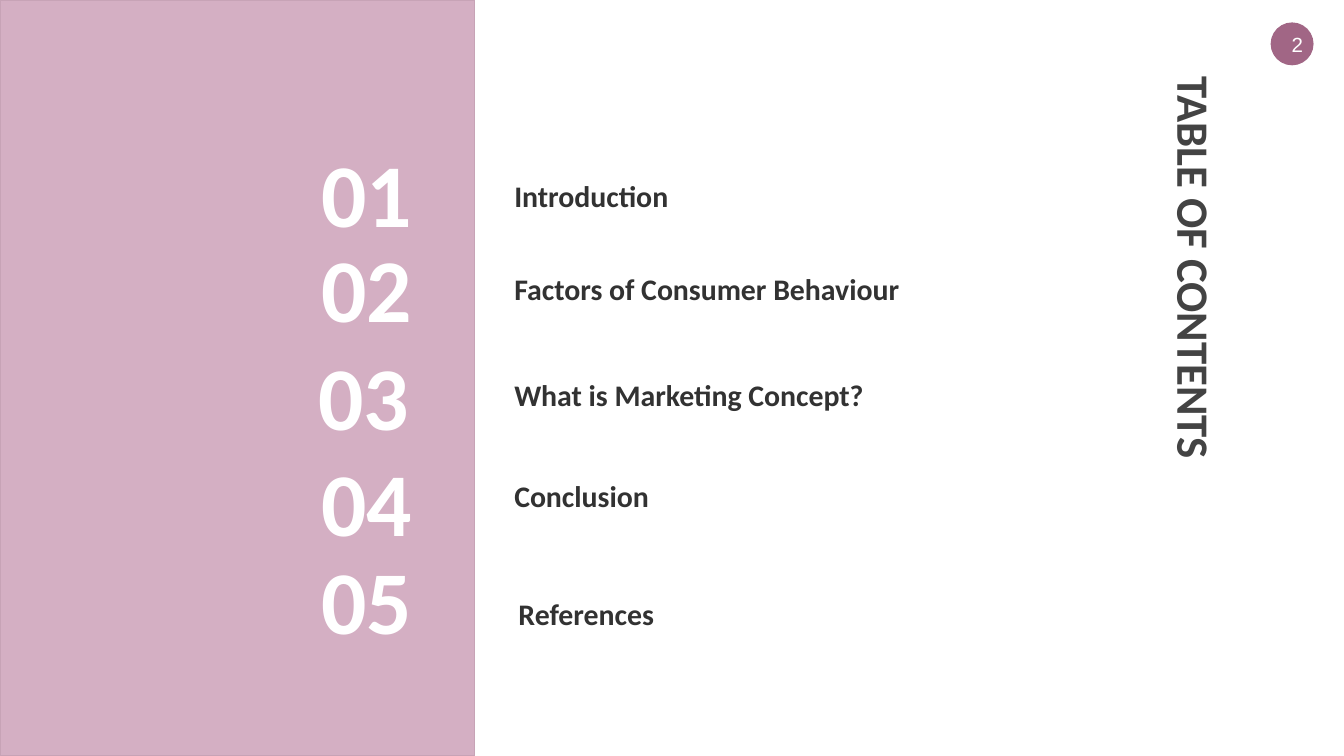
from dataclasses import dataclass

from pptx import Presentation
from pptx import util as u
from pptx.dml.color import RGBColor
from pptx.enum import shapes, text


@dataclass(frozen=True)
class Theme:
    panel: str = "D4AFC3"
    panel_line: str = "C7A3B6"
    badge: str = "A16685"
    title: str = "434343"
    topic: str = "323232"
    white: str = "FFFFFF"
    font: str = "Calibri"
    badge_font: str = "Arial"
    title_size: int = 24
    number_size: int = 48
    topic_size: int = 16
    badge_size: int = 11


THEME = Theme()
SLIDE_WIDTH, SLIDE_HEIGHT = 25.4, 14.29
INSET = 0.25
NUMBER_HEIGHT, TOPIC_HEIGHT = 0.99, 1.6

# Each entry: number (left, top, width), topic (left, top, width), in cm
CONTENTS = [
    ("Introduction", (5.82, 3.12, 4.62), (9.47, 2.69, 6.25)),
    ("Factors of Consumer Behaviour", (5.82, 4.93, 4.29), (9.47, 4.45, 10.13)),
    ("What is Marketing Concept?", (5.77, 6.96, 4.17), (9.47, 6.45, 10.31)),
    ("Conclusion", (5.82, 8.97, 4.17), (9.47, 8.36, 10.31)),
    ("References", (5.82, 10.82, 4.17), (9.55, 10.59, 6.25)),
]


def format_text(frame, words, size, color, font=THEME.font, bold=True):
    frame.text = words
    span = frame.paragraphs[0].runs[0]
    span.font.name = font
    span.font.size = u.Pt(size)
    span.font.bold = bold
    span.font.color.rgb = RGBColor.from_string(color)


def add_label(page, words, left, top, width, height, size, color,
              anchor=text.MSO_ANCHOR.MIDDLE):
    box = page.shapes.add_textbox(u.Cm(left), u.Cm(top), u.Cm(width), u.Cm(height))
    frame = box.text_frame
    frame.word_wrap = True
    frame.vertical_anchor = anchor
    frame.margin_left = frame.margin_right = u.Cm(INSET)
    frame.margin_top = frame.margin_bottom = u.Cm(INSET)
    format_text(frame, words, size, color)
    return box


def add_filled(page, kind, left, top, width, height, fill, line, line_width):
    shape = page.shapes.add_shape(kind, u.Cm(left), u.Cm(top), u.Cm(width), u.Cm(height))
    shape.shadow.inherit = False
    shape.fill.solid()
    shape.fill.fore_color.rgb = RGBColor.from_string(fill)
    shape.line.color.rgb = RGBColor.from_string(line)
    shape.line.width = u.Pt(line_width)
    return shape


def add_badge(page, words):
    badge = add_filled(page, shapes.MSO_SHAPE.OVAL, 24.05, 0.46, 0.74, 0.74,
                       THEME.badge, THEME.badge, 2)
    frame = badge.text_frame
    frame.word_wrap = False
    frame.vertical_anchor = text.MSO_ANCHOR.MIDDLE
    frame.margin_left = u.Cm(0.2)
    frame.margin_right = frame.margin_top = frame.margin_bottom = 0
    format_text(frame, words, THEME.badge_size, THEME.white, THEME.badge_font, False)
    frame.paragraphs[0].alignment = text.PP_ALIGN.CENTER


def main():
    deck = Presentation()
    deck.slide_width, deck.slide_height = u.Cm(SLIDE_WIDTH), u.Cm(SLIDE_HEIGHT)
    page = deck.slides.add_slide(deck.slide_layouts[6])

    # Side panel
    add_filled(page, shapes.MSO_SHAPE.RECTANGLE, 0, 0, 8.97, SLIDE_HEIGHT,
               THEME.panel, THEME.panel_line, 0.75)

    # Vertical title
    title = add_label(page, "TABLE OF CONTENTS", 18.54, 4.57, 8.1, 1.35,
                      THEME.title_size, THEME.title)
    title.rotation = 90

    # Numbered topics
    for number, (topic, number_place, topic_place) in enumerate(CONTENTS, 1):
        add_label(page, f"{number:02}", *number_place, NUMBER_HEIGHT,
                  THEME.number_size, THEME.white)
        add_label(page, topic, *topic_place, TOPIC_HEIGHT,
                  THEME.topic_size, THEME.topic, text.MSO_ANCHOR.BOTTOM)

    # Page number
    add_badge(page, "2")
    deck.save("out.pptx")


if __name__ == "__main__":
    main()
